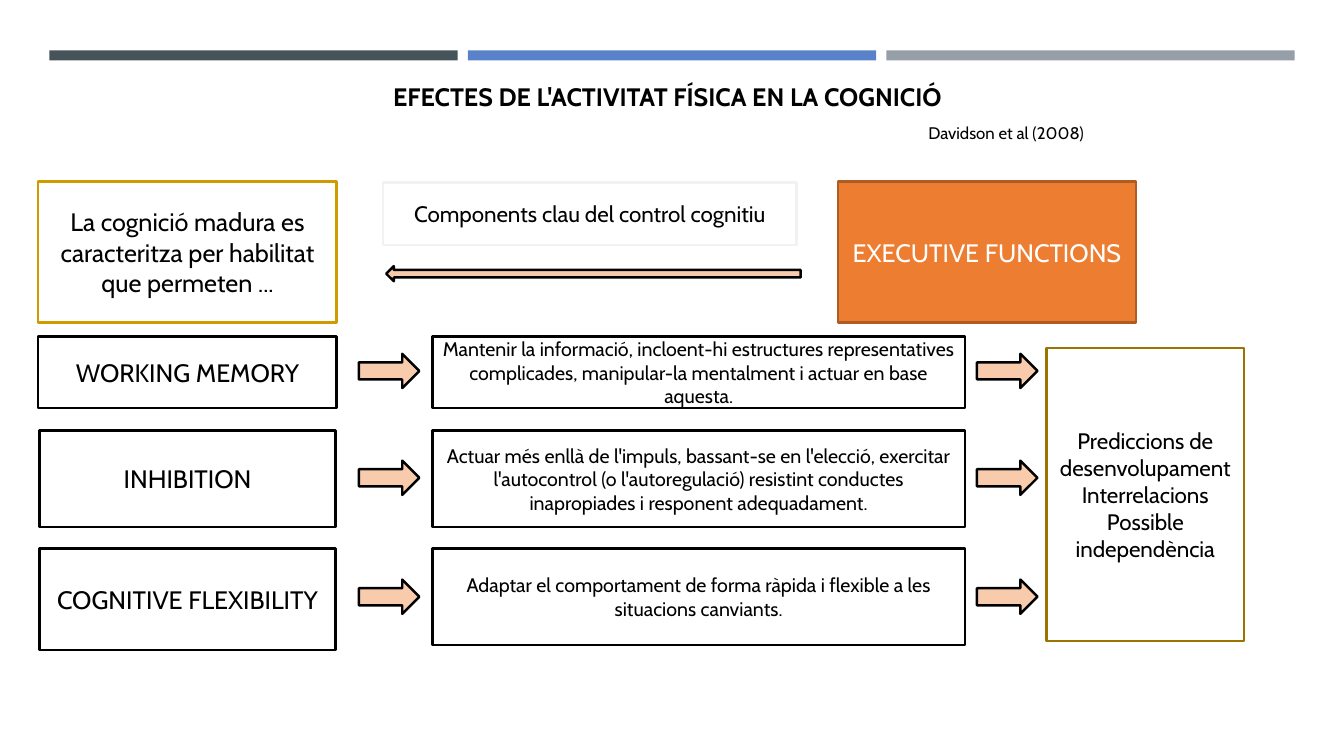
from dataclasses import dataclass
from typing import Optional

from pptx import Presentation
from pptx.dml.color import RGBColor
from pptx.enum.shapes import MSO_SHAPE as Preset
from pptx.enum.text import MSO_ANCHOR as Anchor, PP_ALIGN as Align
from pptx.util import Inches, Pt

FONT = "Cabin"
COLORS = {
    "black": "000000",
    "white": "FFFFFF",
    "slate": "465359",
    "blue": "5A82CB",
    "gray": "969FA7",
    "gold": "CF9B00",
    "dark_gold": "9B7400",
    "orange": "ED7D31",
    "rust": "AF5C24",
    "peach": "F8CBAD",
    "pale": "F2F2F2",
}


@dataclass
class Area:
    left: float
    top: float
    width: float
    height: float

    def lengths(self) -> list:
        return [Inches(v) for v in (self.left, self.top, self.width, self.height)]


@dataclass
class Box:
    area: Area
    lines: list[str]
    size: int = 18
    fill: str = "white"
    line: str = "black"
    ink: str = "black"


@dataclass
class Ability:
    name: str
    name_area: Area
    meaning: str
    meaning_height: float
    arrow_top: float


def color(name: str) -> RGBColor:
    return RGBColor.from_string(COLORS[name])


def write(frame, lines: list[str], size: int, ink: str = "black",
          align: Align = Align.CENTER, bold: bool = False) -> None:
    frame.word_wrap = True
    for index, line in enumerate(lines):
        para = frame.add_paragraph() if index else frame.paragraphs[0]
        para.alignment = align
        span = para.add_run()
        span.text = line
        span.font.name = FONT
        span.font.size = Pt(size)
        span.font.bold = bold
        span.font.color.rgb = color(ink)


def draw_shape(page, preset: Preset, area: Area, fill: str, line: Optional[str] = None):
    shape = page.shapes.add_shape(preset, *area.lengths())
    shape.shadow.inherit = False
    shape.fill.solid()
    shape.fill.fore_color.rgb = color(fill)
    if line:
        shape.line.color.rgb = color(line)
        shape.line.width = Pt(1.75)
    else:
        shape.line.fill.background()
    return shape


def draw_box(page, box: Box) -> None:
    shape = draw_shape(page, Preset.RECTANGLE, box.area, box.fill, box.line)
    shape.text_frame.vertical_anchor = Anchor.MIDDLE
    write(shape.text_frame, box.lines, box.size, box.ink)


def draw_arrow(page, area: Area, rotation: int = 0) -> None:
    draw_shape(page, Preset.RIGHT_ARROW, area, "peach", "black").rotation = rotation


def draw_text(page, area: Area, text: str, size: int,
              align: Align = Align.CENTER, bold: bool = False) -> None:
    label = page.shapes.add_textbox(*area.lengths())
    write(label.text_frame, [text], size, align=align, bold=bold)


ABILITIES = [
    Ability("WORKING MEMORY", Area(0.38, 3.34, 2.96, 0.71),
            "Mantenir la informació, incloent-hi estructures representatives "
            "complicades, manipular-la mentalment i actuar en base aquesta.",
            0.71, 3.51),
    Ability("INHIBITION", Area(0.39, 4.27, 2.94, 0.96),
            "Actuar més enllà de l'impuls, bassant-se en l'elecció, exercitar "
            "l'autocontrol (o l'autoregulació) resistint conductes inapropiades "
            "i responent adequadament.",
            0.96, 4.57),
    Ability("COGNITIVE FLEXIBILITY", Area(0.39, 5.44, 2.94, 1.01),
            "Adaptar el comportament de forma ràpida i flexible a les "
            "situacions canviants.",
            0.96, 5.75),
]

BOXES = [
    Box(Area(0.38, 1.8, 2.96, 1.4),
        ["La cognició madura es caracteritza per habilitat que permeten ..."],
        line="gold"),
    Box(Area(3.8, 1.81, 4.1, 0.62), ["Components clau del control cognitiu"],
        size=16, line="pale"),
    Box(Area(8.31, 1.8, 2.96, 1.4), ["EXECUTIVE FUNCTIONS"],
        fill="orange", line="rust", ink="white"),
    Box(Area(10.38, 3.45, 1.96, 2.91),
        ["Prediccions de desenvolupament", "Interrelacions", "Possible independència"],
        size=16, line="dark_gold"),
]


def main() -> None:
    deck = Presentation()
    deck.slide_width, deck.slide_height = Inches(13.33), Inches(7.5)
    page = deck.slides.add_slide(deck.slide_layouts[6])

    # Colour bars across the top
    for index, fill in enumerate(("slate", "blue", "gray")):
        draw_shape(page, Preset.RECTANGLE, Area(0.49 + 4.15 * index, 0.5, 4.05, 0.1), fill)

    # Title and citation
    draw_text(page, Area(3.8, 0.76, 6.88, 0.4),
              "EFECTES DE L'ACTIVITAT FÍSICA EN LA COGNICIÓ", 18, Align.LEFT, True)
    draw_text(page, Area(8.48, 1.17, 3, 0.3), "Davidson et al (2008)", 12)

    # Top row and predictions
    for box in BOXES:
        draw_box(page, box)
    draw_arrow(page, Area(3.83, 2.64, 4.11, 0.15), rotation=180)

    # Each ability with its meaning and two arrows
    for ability in ABILITIES:
        draw_box(page, Box(ability.name_area, [ability.name]))
        meaning_area = Area(4.29, ability.name_area.top, 5.28, ability.meaning_height)
        draw_box(page, Box(meaning_area, [ability.meaning], size=14))
        for left in (3.56, 9.69):
            draw_arrow(page, Area(left, ability.arrow_top, 0.6, 0.34))

    deck.save("out.pptx")


if __name__ == "__main__":
    main()
